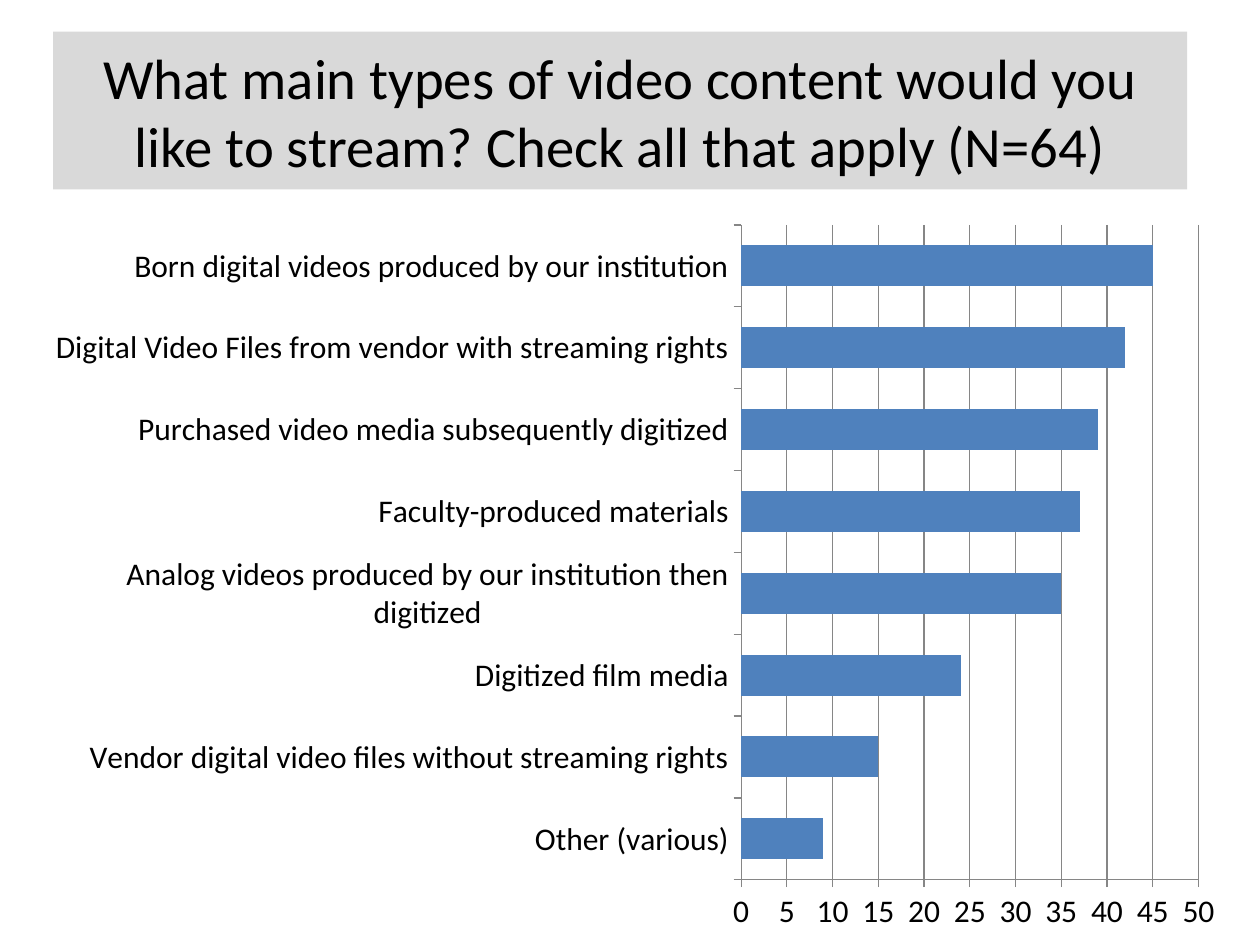
from pptx import Presentation
from pptx import util as u
from pptx.chart.data import CategoryChartData
from pptx.dml.color import RGBColor
from pptx.enum import chart as ch, text

THEME = {
    "font": "Calibri", "head": 32.4, "label": 18,
    "ink": "000000", "band": "D9D9D9", "bar": "4F81BD", "rule": "868686",
}
TITLE = "What main types of video content would you like to stream? Check all that apply (N=64)"
VOTES = [
    ("Born digital videos produced by our institution", 45),
    ("Digital Video Files from vendor with streaming rights", 42),
    ("Purchased video media subsequently digitized", 39),
    ("Faculty-produced materials", 37),
    ("Analog videos produced by our institution then digitized", 35),
    ("Digitized film media", 24),
    ("Vendor digital video files without streaming rights", 15),
    ("Other (various)", 9),
]
HEAD_BOX = (1.07, 0.64, 22.86, 3.18)
PLOT_BOX = (0.64, 4.24, 24.33, 14.81)


def tint(name):
    return RGBColor.from_string(THEME[name])


def style(font, size, color="ink"):
    font.name = THEME["font"]
    font.size = u.Pt(THEME[size])
    font.color.rgb = tint(color)


def write(shape, words, size="head", color="ink", align=text.PP_ALIGN.CENTER):
    frame = shape.text_frame
    frame.word_wrap = True
    frame.auto_size = text.MSO_AUTO_SIZE.NONE
    frame.vertical_anchor = text.MSO_ANCHOR.MIDDLE
    para = frame.paragraphs[0]
    para.alignment = align
    run = para.add_run()
    run.text = words
    style(run.font, size, color)


def rule(line):
    line.color.rgb = tint("rule")
    line.width = u.Pt(0.75)


def add_head(slide):
    head = slide.shapes.title
    head.left, head.top, head.width, head.height = map(u.Cm, HEAD_BOX)
    head.fill.solid()
    head.fill.fore_color.rgb = tint("band")
    write(head, TITLE)


def add_plot(slide):
    data = CategoryChartData()
    names, counts = zip(*reversed(VOTES))
    data.categories = names
    data.add_series("Series 1", counts)
    chart = slide.shapes.add_chart(
        ch.XL_CHART_TYPE.BAR_CLUSTERED, *map(u.Cm, PLOT_BOX), data).chart
    chart.has_legend = False
    chart.has_title = False
    style(chart.font, "label")

    plot = chart.plots[0]
    plot.gap_width = 100
    plot.vary_by_categories = False
    fill = plot.series[0].format.fill
    fill.solid()
    fill.fore_color.rgb = tint("bar")

    for axis in (chart.category_axis, chart.value_axis):
        axis.major_tick_mark = ch.XL_TICK_MARK.OUTSIDE
        axis.minor_tick_mark = ch.XL_TICK_MARK.NONE
        rule(axis.format.line)
    scale = chart.value_axis
    scale.minimum_scale, scale.maximum_scale, scale.major_unit = 0, 50, 5
    scale.has_major_gridlines = True
    rule(scale.major_gridlines.format.line)


def main():
    deck = Presentation()
    deck.slide_width, deck.slide_height = u.Cm(25.4), u.Cm(19.05)
    slide = deck.slides.add_slide(deck.slide_layouts.get_by_name("Title Only"))
    add_head(slide)
    add_plot(slide)
    deck.save("out.pptx")


if __name__ == "__main__":
    main()
